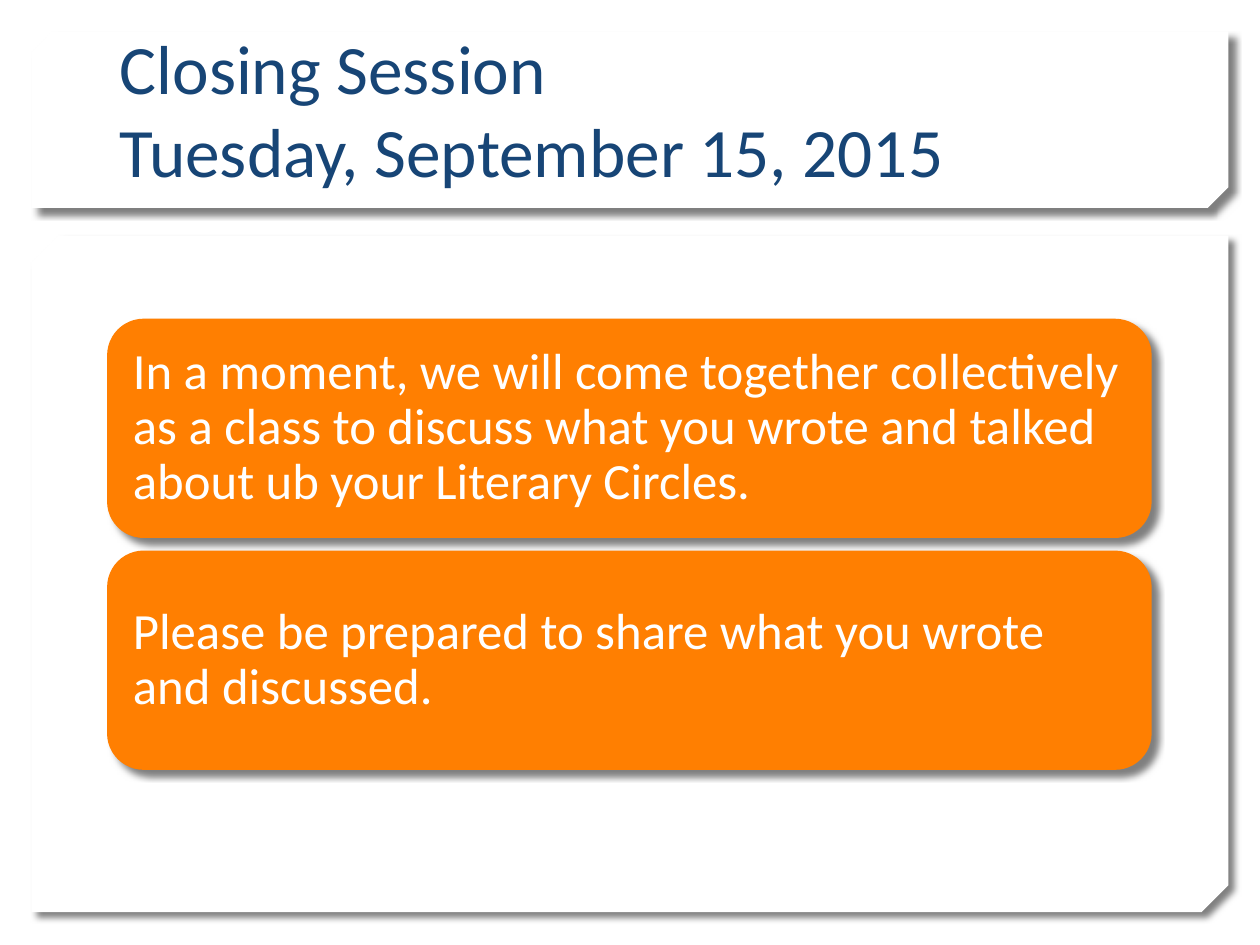
from lxml.etree import fromstring
from pptx import Presentation
from pptx.dml.color import RGBColor
from pptx.enum.shapes import MSO_SHAPE
from pptx.enum.text import MSO_ANCHOR, MSO_AUTO_SIZE, PP_ALIGN
from pptx.util import Inches, Pt

TITLE = "Closing Session\vTuesday, September 15, 2015"
MESSAGES = [
    "In a moment, we will come together collectively as a class to discuss "
    "what you wrote and talked about ub your Literary Circles.",
    "Please be prepared to share what you wrote and discussed.",
]
PANELS = [
    {"top": 1.87, "height": 5.37, "snip": 0.04},
    {"top": 0.25, "height": 1.4, "snip": 0.117},
]
WHITE = RGBColor(0xFF, 0xFF, 0xFF)
NAVY = RGBColor(0x17, 0x45, 0x76)
ORANGE = RGBColor(0xFF, 0x7F, 0x01)
LEFT, WIDTH = 0.85, 8.29
CARD_TOP, CARD_HEIGHT, CARD_GAP = 2.53, 1.74, 0.1
CARD_MARGIN = Inches(0.12)
SHADOW = (
    '<a:outerShdw xmlns:a="http://schemas.openxmlformats.org/drawingml/2006/main" '
    f'blurRad="{Pt(4)}" dist="{Pt(5)}" dir="{45 * 60000}" algn="tl" rotWithShape="0">'
    '<a:srgbClr val="000000"><a:alpha val="50000"/></a:srgbClr></a:outerShdw>'
)


def add_shadowed(page, kind, place, color):
    """Add a borderless filled shape with a soft shadow."""
    shape = page.shapes.add_shape(kind, *map(Inches, place))
    shape.fill.solid()
    shape.fill.fore_color.rgb = color
    shape.line.fill.background()
    shape.shadow.inherit = False
    shape.element.spPr.find("{*}effectLst").append(fromstring(SHADOW))
    return shape


def write(shape, text, size, color, frame_format, spacing=None):
    """Fill a shape with one formatted left-aligned paragraph."""
    frame = shape.text_frame
    frame.text = text
    for name, value in frame_format.items():
        setattr(frame, name, value)
    para = frame.paragraphs[0]
    para.alignment = PP_ALIGN.LEFT
    para.line_spacing = spacing
    for span in para.runs:
        for name, value in {"name": "Calibri", "size": Pt(size)}.items():
            setattr(span.font, name, value)
        span.font.color.rgb = color


def main():
    """Build the closing session slide."""
    deck = Presentation()
    deck.slide_width, deck.slide_height = Inches(10), Inches(7.5)
    page = deck.slides.add_slide(deck.slide_layouts[5])

    for panel in PANELS:
        place = (0.25, panel["top"], 9.5, panel["height"])
        shape = add_shadowed(page, MSO_SHAPE.SNIP_2_DIAG_RECTANGLE, place, WHITE)
        shape.adjustments[0] = 0
        shape.adjustments[1] = panel["snip"]
        shape.element.spPr.xfrm.set("flipV", "1")

    title = page.shapes.title
    page.shapes.element.append(title.element)
    bounds = {"left": LEFT, "top": 0.32, "width": WIDTH, "height": 1.25}
    for name, value in bounds.items():
        setattr(title, name, Inches(value))
    title_format = {
        "word_wrap": True,
        "auto_size": MSO_AUTO_SIZE.NONE,
        "vertical_anchor": MSO_ANCHOR.BOTTOM,
    }
    write(title, TITLE, 39.6, NAVY, title_format)

    card_format = {
        "word_wrap": True,
        "vertical_anchor": MSO_ANCHOR.MIDDLE,
        "margin_left": CARD_MARGIN,
        "margin_right": CARD_MARGIN,
        "margin_top": CARD_MARGIN,
        "margin_bottom": CARD_MARGIN,
    }
    for index, message in enumerate(MESSAGES):
        top = CARD_TOP + index * (CARD_HEIGHT + CARD_GAP)
        place = (LEFT, top, WIDTH, CARD_HEIGHT)
        card = add_shadowed(page, MSO_SHAPE.ROUNDED_RECTANGLE, place, ORANGE)
        write(card, message, 29, WHITE, card_format, 0.9)

    deck.save("out.pptx")


if __name__ == "__main__":
    main()
